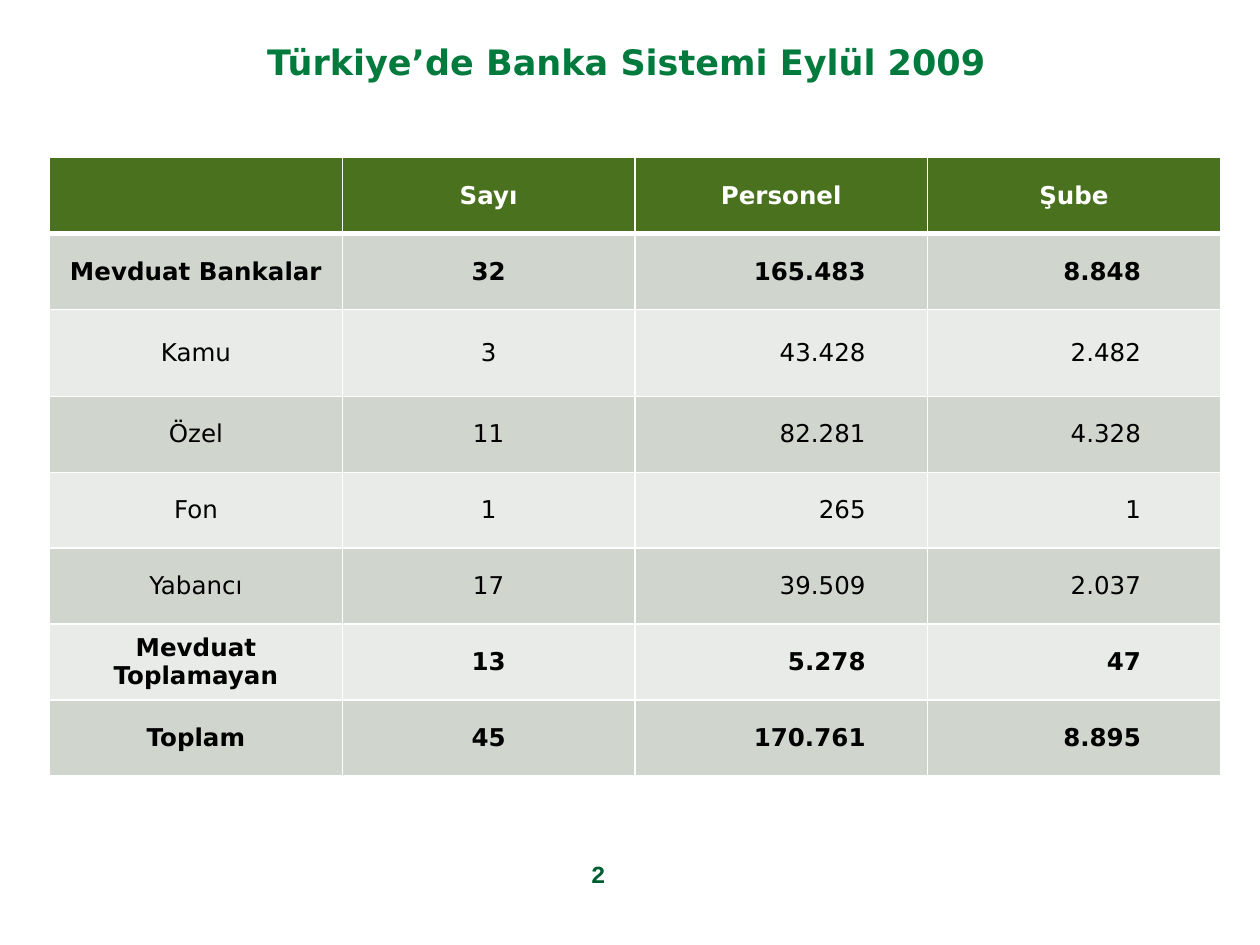
from lxml import etree
from pptx import Presentation
from pptx.dml.color import RGBColor
from pptx.enum.text import MSO_ANCHOR as Anchor, PP_ALIGN as Align
from pptx.oxml.ns import qn
from pptx.util import Cm, Pt

FONT = "DejaVu Sans"


def add_text(paragraph, text, size, color, bold=True, font=FONT):
    run = paragraph.add_run()
    run.text = text
    run.font.name = font
    run.font.size = Pt(size)
    run.font.bold = bold
    run.font.color.rgb = RGBColor.from_string(color)


def set_borders(cell, widths):
    properties = cell._tc.get_or_add_tcPr()
    for index, (side, width) in enumerate(widths.items()):
        line = etree.Element(qn(f"a:ln{side}"), w=str(Pt(width)))
        fill = etree.SubElement(line, qn("a:solidFill"))
        etree.SubElement(fill, qn("a:srgbClr"), val="FFFFFF")
        properties.insert(index, line)


presentation = Presentation()
presentation.slide_width = Cm(25.4)
presentation.slide_height = Cm(19.05)
slide = presentation.slides.add_slide(presentation.slide_layouts[5])

# Title
title = slide.shapes.title
title.left, title.top, title.width, title.height = Cm(1.2), Cm(0.4), Cm(22.86), Cm(1.7)
title.text_frame.vertical_anchor = Anchor.MIDDLE
paragraph = title.text_frame.paragraphs[0]
paragraph.alignment = Align.CENTER
add_text(paragraph, "Türkiye’de Banka Sistemi Eylül 2009", 20, "007A3D")

# Slide number
number_box = slide.shapes.add_textbox(Cm(9.1), Cm(17.32), Cm(5.92), Cm(1.32))
number_box.text_frame.word_wrap = True
paragraph = number_box.text_frame.paragraphs[0]
paragraph.alignment = Align.CENTER
paragraph.line_spacing = 0.76
add_text(paragraph, "2", 14, "005E31", font="Courier New")

# Bank table
rows = [
    ("", "Sayı", "Personel", "Şube"),
    ("Mevduat Bankalar", "32", "165.483", "8.848"),
    ("Kamu", "3", "43.428", "2.482"),
    ("Özel", "11", "82.281", "4.328"),
    ("Fon", "1", "265", "1"),
    ("Yabancı", "17", "39.509", "2.037"),
    ("Mevduat Toplamayan", "13", "5.278", "47"),
    ("Toplam", "45", "170.761", "8.895"),
]
bold_rows = {0, 1, 6, 7}
tall_row = 2
right_margins = {2: Cm(1.25), 3: Cm(1.6)}  # right-aligned figure columns

table = slide.shapes.add_table(
    len(rows), 4, Cm(1), Cm(3.18), Cm(23.6), Cm(12.46)).table
for column in table.columns:
    column.width = Cm(5.9)

for row_index, values in enumerate(rows):
    is_header = row_index == 0
    table.rows[row_index].height = Cm(1.75 if row_index == tall_row else 1.53)
    row_fill = "49711E" if is_header else ("E9EBE8", "D0D5CD")[row_index % 2]
    for column_index, value in enumerate(values):
        cell = table.cell(row_index, column_index)
        cell.fill.solid()
        cell.fill.fore_color.rgb = RGBColor.from_string(row_fill)
        set_borders(cell, {"L": 1, "R": 1, "T": 3 if row_index == 1 else 1,
                           "B": 3 if is_header else 1})
        cell.vertical_anchor = Anchor.MIDDLE
        cell.margin_left = cell.margin_right = cell.margin_top = cell.margin_bottom = 0
        paragraph = cell.text_frame.paragraphs[0]
        paragraph.alignment = Align.CENTER
        if not is_header and column_index in right_margins:
            paragraph.alignment = Align.RIGHT
            cell.margin_right = right_margins[column_index]
        if value:
            add_text(paragraph, value, 14, "FFFFFF" if is_header else "000000",
                     bold=row_index in bold_rows)

presentation.save("out.pptx")
